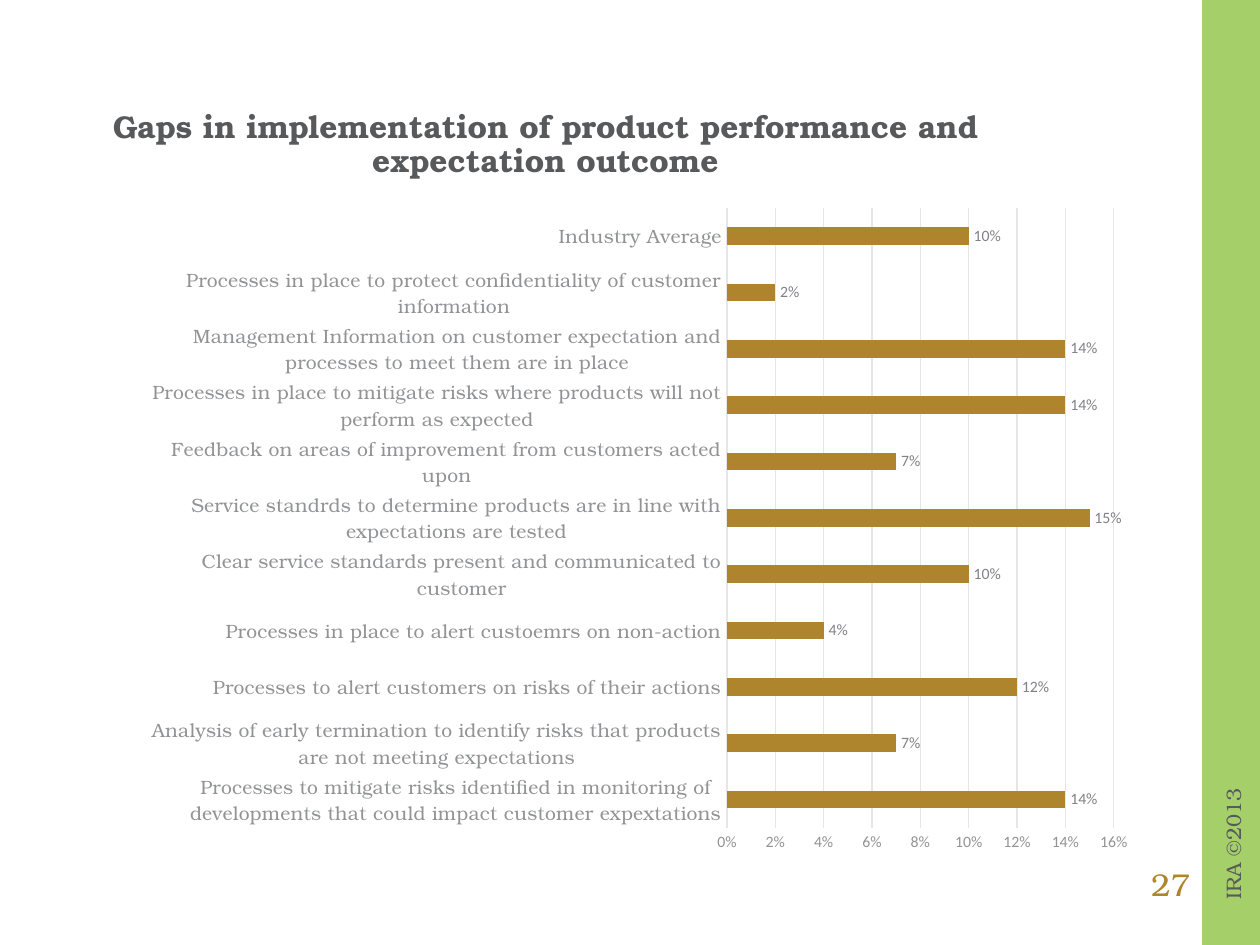
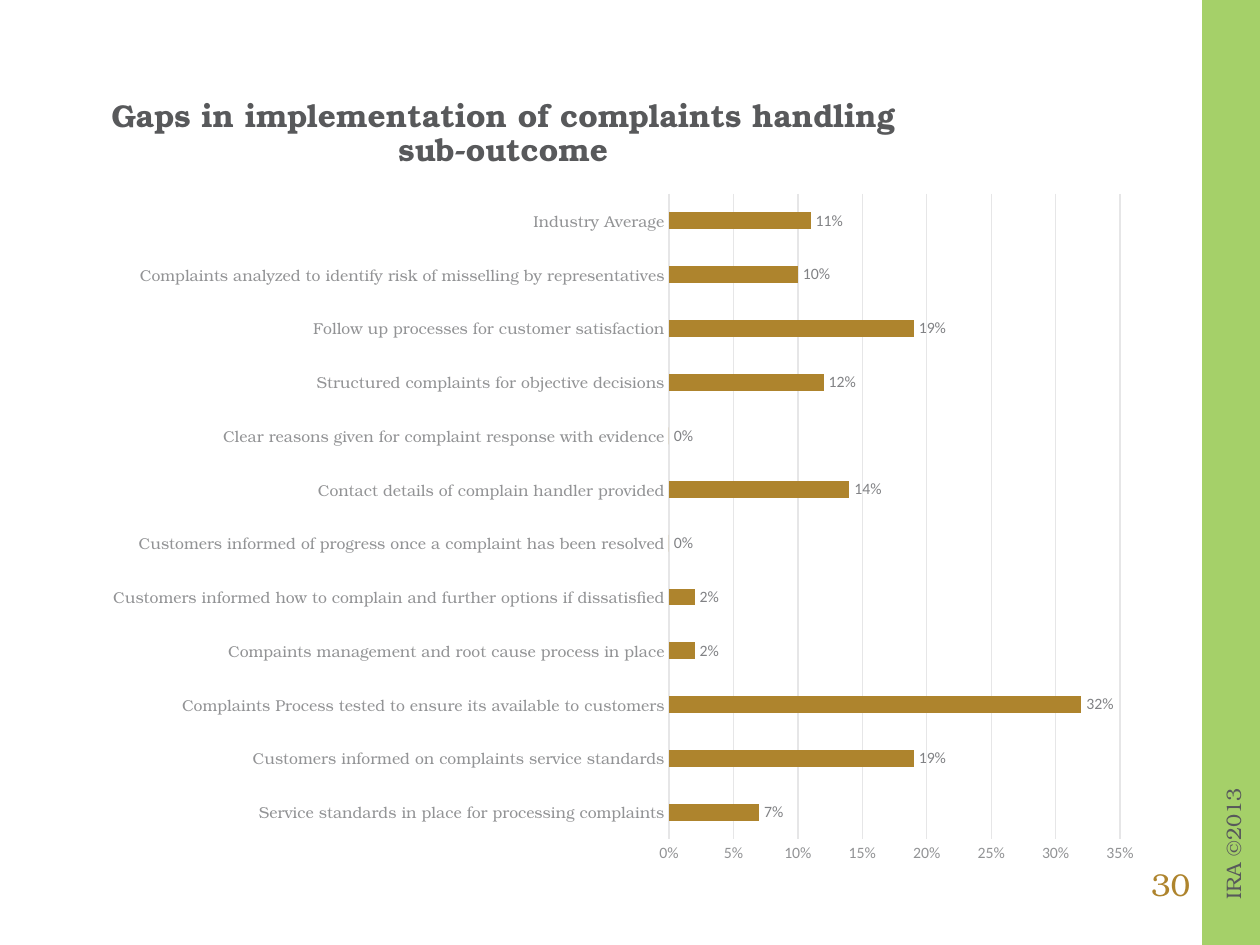
from dataclasses import dataclass

from lxml import etree
from pptx import Presentation
from pptx.chart.data import CategoryChartData
from pptx.dml.color import RGBColor
from pptx.enum.chart import XL_CHART_TYPE, XL_LABEL_POSITION, XL_TICK_MARK
from pptx.enum.shapes import MSO_SHAPE
from pptx.enum.text import MSO_ANCHOR, MSO_AUTO_SIZE, PP_ALIGN
from pptx.oxml.ns import qn
from pptx.util import Inches, Pt

BAR_CLUSTERED = XL_CHART_TYPE.BAR_CLUSTERED
OUTSIDE_END = XL_LABEL_POSITION.OUTSIDE_END
NO_TICK = XL_TICK_MARK.NONE
RECTANGLE = MSO_SHAPE.RECTANGLE
MIDDLE = MSO_ANCHOR.MIDDLE
NO_AUTOFIT = MSO_AUTO_SIZE.NONE
CENTER = PP_ALIGN.CENTER

COLORS = {
    "background": "FFFFFF",
    "band": "A5D069",
    "text": "58595B",
    "gold": "AE842D",
    "axis_text": "929395",
    "label_text": "818285",
    "grid": "E6E6E7",
}
SERIF = "TeX Gyre Bonum"
SANS = "Calibri"
PERCENT = "0%"
TITLE_ONLY = 5


@dataclass
class Area:
    left: float
    top: float
    width: float
    height: float

    def lengths(self):
        return [Inches(n) for n in (self.left, self.top, self.width, self.height)]


@dataclass
class GapPage:
    number: int
    title_lines: list[str]
    title_area: Area
    chart_area: Area
    plot_area: Area  # measured on the slide
    category_size: int
    axis_maximum: float
    axis_step: float
    gaps: list[tuple[str, float]]  # bottom bar first


BAND = Area(9.54, 0, 0.46, 7.5)
COPYRIGHT = Area(9.18, 6.55, 1.21, 0.3)
PAGE_NUMBER = Area(8.99, 6.82, 0.6, 0.4)

PAGES = [
    GapPage(
        27,
        ["Gaps in implementation of product performance and expectation outcome"],
        Area(0.86, 0.88, 6.94, 0.55),
        Area(1.05, 1.55, 8.07, 5.32),
        Area(5.77, 1.65, 3.07, 4.92),
        11, 0.16, 0.02,
        [
            ("Processes to mitigate risks identified in monitoring of "
             "developments that could impact customer expextations", 0.14),
            ("Analysis of early termination to identify risks that products "
             "are not meeting expectations", 0.07),
            ("Processes to alert customers on risks of their actions", 0.12),
            ("Processes in place to alert custoemrs on non-action", 0.04),
            ("Clear service standards present and communicated to customer", 0.10),
            ("Service standrds to determine products are in line with "
             "expectations are tested", 0.15),
            ("Feedback on areas of improvement from customers acted upon", 0.07),
            ("Processes in place to mitigate risks where products will not "
             "perform as expected", 0.14),
            ("Management Information on customer expectation and "
             "processes to meet them are in place", 0.14),
            ("Processes in place to protect confidentiality of customer "
             "information", 0.02),
            ("Industry Average", 0.10),
        ],
    ),
    GapPage(
        30,
        ["Gaps in implementation of complaints handling", "sub-outcome"],
        Area(0.46, 0.79, 7.07, 0.55),
        Area(0.73, 1.43, 8.44, 5.52),
        Area(5.31, 1.54, 3.58, 5.12),
        9, 0.35, 0.05,
        [
            ("Service standards in place for processing complaints", 0.07),
            ("Customers informed on complaints service standards", 0.19),
            ("Complaints Process tested to ensure its available to customers", 0.32),
            ("Compaints management and root cause process in place", 0.02),
            ("Customers informed how to complain and further options if "
             "dissatisfied", 0.02),
            ("Customers informed of progress once a complaint has been resolved", 0),
            ("Contact details of complain handler provided", 0.14),
            ("Clear reasons given for complaint response with evidence", 0),
            ("Structured complaints for objective decisions", 0.12),
            ("Follow up processes for customer satisfaction", 0.19),
            ("Complaints analyzed to identify risk of misselling by "
             "representatives", 0.10),
            ("Industry Average", 0.11),
        ],
    ),
]


def color(name: str) -> RGBColor:
    return RGBColor.from_string(COLORS[name])


def style_font(font, name: str, size: float, color_name: str, bold: bool = False) -> None:
    font.name = name
    font.size = Pt(size)
    font.bold = bold
    font.color.rgb = color(color_name)


def style_line(line, color_name: str) -> None:
    line.color.rgb = color(color_name)
    line.width = Pt(0.75)


def add_caption(page, area: Area, text: str, size: int, color_name: str,
                rotation: int = 0) -> None:
    box = page.shapes.add_textbox(*area.lengths())
    box.rotation = rotation
    box.text_frame.word_wrap = True
    para = box.text_frame.paragraphs[0]
    para.alignment = CENTER
    span = para.add_run()
    span.text = text
    style_font(span.font, SERIF, size, color_name)


def add_frame(page, number: int) -> None:
    """Side band, copyright line and page number."""
    page.background.fill.solid()
    page.background.fill.fore_color.rgb = color("background")
    band = page.shapes.add_shape(RECTANGLE, *BAND.lengths())
    band.shadow.inherit = False
    band.fill.solid()
    band.fill.fore_color.rgb = color("band")
    band.line.fill.background()
    add_caption(page, COPYRIGHT, "IRA ©2013", 12, "text", rotation=270)
    add_caption(page, PAGE_NUMBER, str(number), 18, "gold")


def set_title(page, lines: list[str], area: Area) -> None:
    title = page.shapes.title
    title.left, title.top, title.width, title.height = area.lengths()
    frame = title.text_frame
    frame.auto_size = NO_AUTOFIT
    frame.word_wrap = True
    frame.vertical_anchor = MIDDLE
    frame.margin_left = frame.margin_right = Inches(0)
    frame.margin_top = frame.margin_bottom = Inches(0)
    para = frame.paragraphs[0]
    para.alignment = CENTER
    para.line_spacing = 0.9
    for index, line in enumerate(lines):
        if index:
            para.add_line_break()
        span = para.add_run()
        span.text = line
        style_font(span.font, SERIF, 18, "text", bold=True)


def place_plot(chart, chart_area: Area, plot_area: Area) -> None:
    """Fix the inner plot area as fractions of the chart."""
    plot = chart.element.find(".//" + qn("c:plotArea"))
    layout = plot.find(qn("c:layout"))
    if layout is None:
        layout = etree.Element(qn("c:layout"))
        plot.insert(0, layout)
    manual = etree.SubElement(layout, qn("c:manualLayout"))
    settings = {
        "layoutTarget": "inner",
        "xMode": "edge",
        "yMode": "edge",
        "x": (plot_area.left - chart_area.left) / chart_area.width,
        "y": (plot_area.top - chart_area.top) / chart_area.height,
        "w": plot_area.width / chart_area.width,
        "h": plot_area.height / chart_area.height,
    }
    for tag, value in settings.items():
        etree.SubElement(manual, qn("c:" + tag)).set("val", str(value))


def add_gap_chart(page, content: GapPage) -> None:
    data = CategoryChartData(number_format=PERCENT)
    data.categories = [name for name, _ in content.gaps]
    data.add_series("Series 1", [value for _, value in content.gaps])
    chart = page.shapes.add_chart(
        BAR_CLUSTERED, *content.chart_area.lengths(), data).chart
    chart.has_legend = False
    chart.has_title = False
    style_font(chart.font, SANS, 10, "text")
    place_plot(chart, content.chart_area, content.plot_area)

    # Bars and their labels
    plot = chart.plots[0]
    plot.gap_width = 219
    plot.vary_by_categories = False
    bars = plot.series[0]
    bars.invert_if_negative = False
    bars.format.fill.solid()
    bars.format.fill.fore_color.rgb = color("gold")
    labels = bars.data_labels
    labels.show_value = True
    labels.position = OUTSIDE_END
    labels.number_format = PERCENT
    labels.number_format_is_linked = False
    style_font(labels.font, SANS, 9, "label_text")

    # Axes
    categories, values = chart.category_axis, chart.value_axis
    for axis in (categories, values):
        axis.major_tick_mark = axis.minor_tick_mark = NO_TICK
    style_font(categories.tick_labels.font, SERIF, content.category_size, "axis_text")
    style_line(categories.format.line, "grid")
    style_font(values.tick_labels.font, SANS, 9, "axis_text")
    values.tick_labels.number_format = PERCENT
    values.tick_labels.number_format_is_linked = False
    values.format.line.fill.background()
    values.has_major_gridlines = True
    style_line(values.major_gridlines.format.line, "grid")
    values.minimum_scale = 0
    values.maximum_scale = content.axis_maximum
    values.major_unit = content.axis_step


def main() -> None:
    deck = Presentation()
    deck.slide_width = Inches(10)
    deck.slide_height = Inches(7.5)
    for content in PAGES:
        page = deck.slides.add_slide(deck.slide_layouts[TITLE_ONLY])
        add_frame(page, content.number)
        set_title(page, content.title_lines, content.title_area)
        add_gap_chart(page, content)
    deck.save("out.pptx")


if __name__ == "__main__":
    main()
